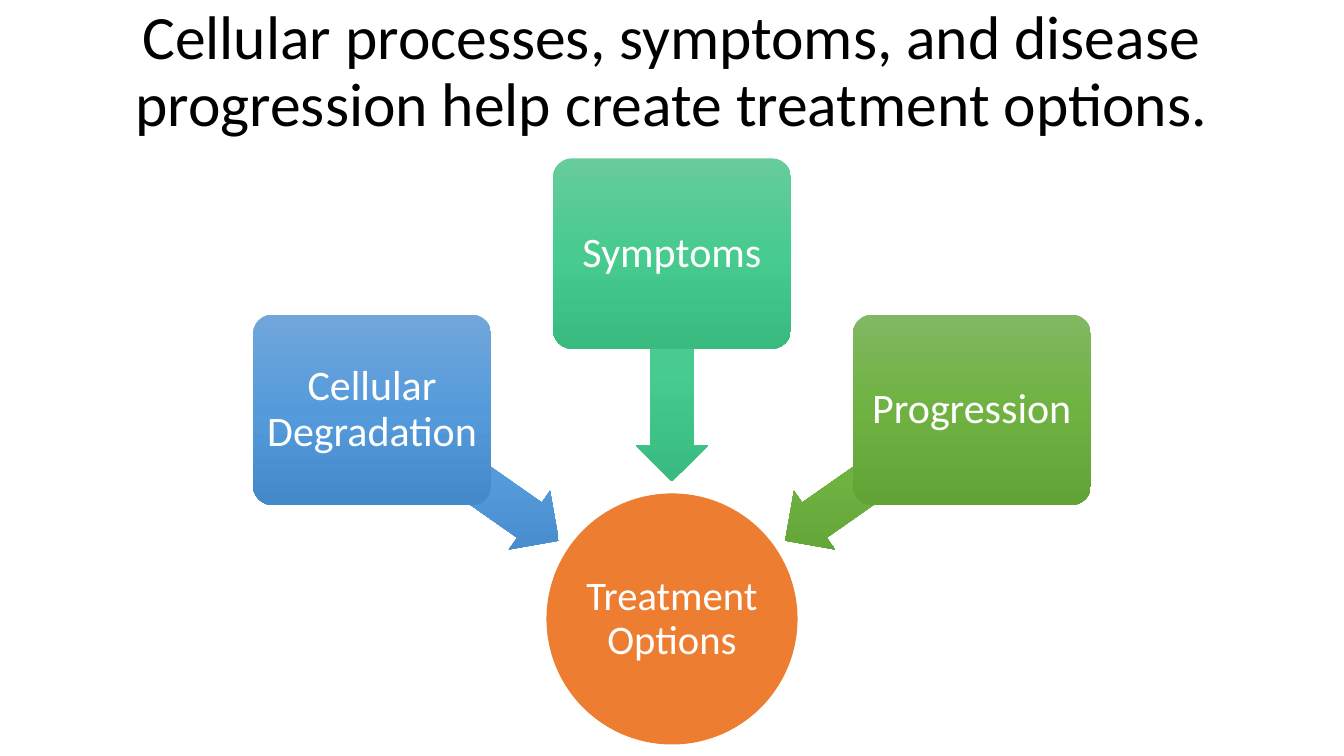
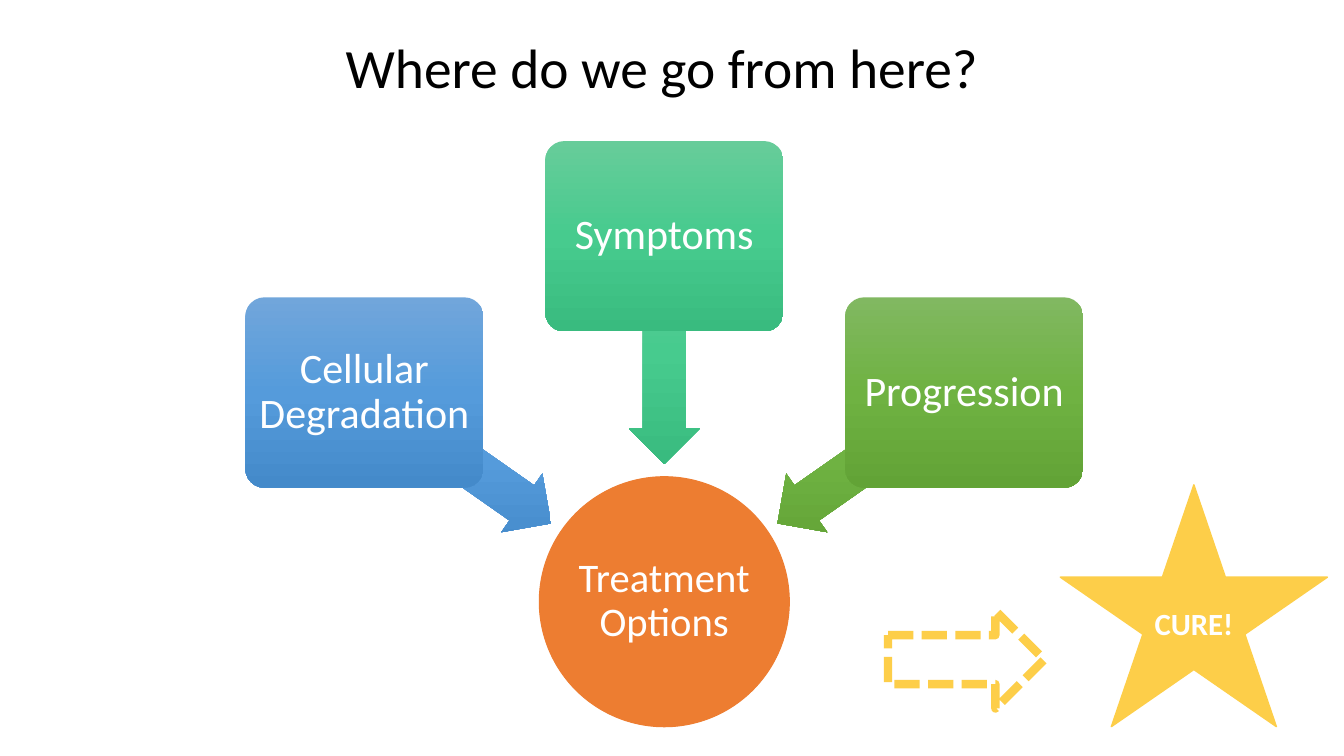
from copy import deepcopy

from pptx import Presentation
from pptx.dml.color import RGBColor
from pptx.enum.dml import MSO_LINE
from pptx.enum.shapes import MSO_SHAPE
from pptx.enum.text import MSO_ANCHOR, PP_ALIGN
from pptx.util import Pt

LEFT, CENTER = PP_ALIGN.LEFT, PP_ALIGN.CENTER
MIDDLE = MSO_ANCHOR.MIDDLE
DASH = MSO_LINE.SQUARE_DOT
ROUNDED, OVAL = MSO_SHAPE.ROUNDED_RECTANGLE, MSO_SHAPE.OVAL
LEFT_ARROW, RIGHT_ARROW = MSO_SHAPE.LEFT_ARROW, MSO_SHAPE.RIGHT_ARROW
STAR = MSO_SHAPE.STAR_5_POINT

FONT = "Calibri"
BLACK = RGBColor(0x00, 0x00, 0x00)
WHITE = RGBColor(0xFF, 0xFF, 0xFF)
ORANGE = RGBColor(0xED, 0x7D, 0x31)
YELLOW = RGBColor(0xFD, 0xCE, 0x49)
BLUES = RGBColor(0x71, 0xA6, 0xDB), RGBColor(0x55, 0x9B, 0xDB), RGBColor(0x44, 0x8A, 0xCA)
TEALS = RGBColor(0x67, 0xCC, 0x9A), RGBColor(0x47, 0xCB, 0x8E), RGBColor(0x39, 0xBB, 0x7F)
GREENS = RGBColor(0x81, 0xB8, 0x61), RGBColor(0x6F, 0xB2, 0x42), RGBColor(0x62, 0xA3, 0x36)

CIRCLE = 178.6
CARD_W, CARD_H = 170, 136
ARROW_W, ARROW_H = 162.7, 51.1

# Text, colours, arrow rotation, then card and arrow centres relative to the circle
CAUSES = [
    ("Cellular Degradation", BLUES, 215, (-214.2, -149.4), (-147.5, -102.6)),
    ("Symptoms", TEALS, 270, (0, -261), (0, -179.7)),
    ("Progression", GREENS, 325, (214.2, -149.4), (147.5, -102.6)),
]

# Title, its box, size and alignment, then the circle's centre
SLIDES = [
    ("Cellular processes, symptoms, and disease progression help create treatment options.",
     (0, 0, 960, 104.4), 44, CENTER, (480, 442.1)),
    ("Where do we go from here?",
     (239.8, 22.3, 470.2, 56.2), 39.6, LEFT, (474.5, 429.8)),
]


def add_centred(slide, kind, cx, cy, w, h, colours=()):
    """Add a shape around a centre: no colour, one solid colour or a vertical gradient."""
    sp = slide.shapes.add_shape(kind, Pt(cx - w / 2), Pt(cy - h / 2), Pt(w), Pt(h))
    sp.shadow.inherit = False
    sp.line.fill.background()
    if not colours:
        sp.fill.background()
    elif len(colours) == 1:
        sp.fill.solid()
        sp.fill.fore_color.rgb = colours[0]
    else:
        sp.fill.gradient()
        sp.fill.gradient_angle = 270
        grad = sp.element.spPr.find("{*}gradFill")
        grad.set("rotWithShape", "0")  # shading stays vertical on turned arrows
        stops = grad.find("{*}gsLst")
        stops.append(deepcopy(stops[0]))
        for i, (stop, colour) in enumerate(zip(sp.fill.gradient_stops, colours)):
            stop.color.rgb = colour
            stop.position = i / 2
    return sp


def write(sp, text, size, colour=WHITE, align=CENTER, inset=None, spacing=0.9, bold=False):
    tf = sp.text_frame
    tf.text = text
    tf.word_wrap = True
    tf.vertical_anchor = MIDDLE
    if inset is not None:
        tf.margin_left = tf.margin_right = tf.margin_top = tf.margin_bottom = Pt(inset)
    p = tf.paragraphs[0]
    p.alignment = align
    p.line_spacing = spacing
    font = p.runs[0].font
    font.name, font.size, font.bold = FONT, Pt(size), bold
    font.color.rgb = colour


prs = Presentation()
prs.slide_width, prs.slide_height = Pt(960), Pt(540)

for title, box, size, align, (cx, cy) in SLIDES:
    slide = prs.slides.add_slide(prs.slide_layouts[6])
    write(slide.shapes.add_textbox(*map(Pt, box)), title, size, BLACK, align)

    circle = add_centred(slide, OVAL, cx, cy, CIRCLE, CIRCLE, [ORANGE])
    circle.line.color.rgb = ORANGE
    circle.line.width = Pt(0.75)
    write(circle, "Treatment Options", 29, inset=1.5)

    for text, colours, angle, (card_dx, card_dy), (arrow_dx, arrow_dy) in CAUSES:
        arrow = add_centred(slide, LEFT_ARROW, cx + arrow_dx, cy + arrow_dy,
                            ARROW_W, ARROW_H, colours)
        arrow.adjustments[0] = 0.6
        arrow.adjustments[1] = 0.5
        arrow.rotation = angle
        card = add_centred(slide, ROUNDED, cx + card_dx, cy + card_dy,
                           CARD_W, CARD_H, colours)
        card.adjustments[0] = 0.1
        write(card, text, 30, inset=4.2)

# The last slide also points on to the cure
next_step = add_centred(slide, RIGHT_ARROW, 690.1, 471.2, 111.6, 69.8)
next_step.line.color.rgb = YELLOW
next_step.line.width = Pt(6)
next_step.line.dash_style = DASH

star = add_centred(slide, STAR, 852.8, 432.7, 190.8, 172.8, [YELLOW])
star.line.color.rgb = YELLOW
star.line.width = Pt(1)
write(star, "CURE!", 22, inset=0, spacing=1.0, bold=True)

prs.save("out.pptx")
